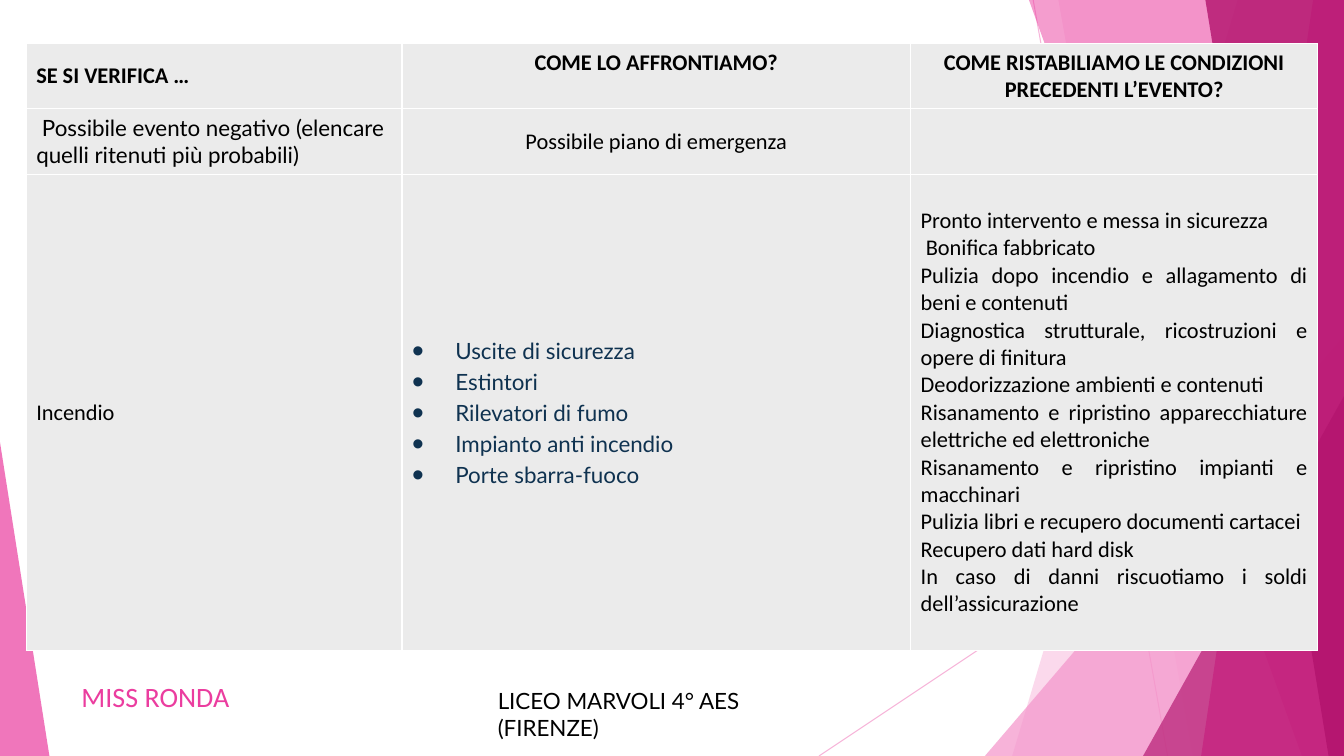
from dataclasses import dataclass

from lxml.etree import SubElement
from pptx import Presentation
from pptx.dml.color import RGBColor
from pptx.enum.shapes import MSO_CONNECTOR, MSO_SHAPE
from pptx.enum.text import MSO_ANCHOR, MSO_AUTO_SIZE, PP_ALIGN
from pptx.oxml.ns import qn
from pptx.util import Pt


@dataclass(frozen=True)
class Theme:
    light_pink: str = "F496CB"
    pink: str = "EB3D9F"
    magenta: str = "B2136D"
    cell: str = "EBEBEB"
    border: str = "FFFFFF"
    ink: str = "000000"
    navy: str = "0F3250"
    main_font: str = "Calibri"
    second_font: str = "Lato"
    text_size: int = 16
    title_size: int = 20


THEME = Theme()
WIDTH, HEIGHT = 960, 540
COLUMNS = (268.4, 363.4, 290.8)
ROWS = (46.4, 47.3, 339.7)
MEASURES = [
    "Uscite di sicurezza",
    "Estintori",
    "Rilevatori di fumo",
    "Impianto anti incendio",
    "Porte sbarra-fuoco",
]
RECOVERY = [
    "Pronto intervento e messa in sicurezza",
    " Bonifica fabbricato",
    "Pulizia dopo incendio e allagamento di beni e contenuti",
    "Diagnostica strutturale, ricostruzioni e opere di finitura",
    "Deodorizzazione ambienti e contenuti",
    "Risanamento e ripristino apparecchiature elettriche ed elettroniche",
    "Risanamento e ripristino impianti e macchinari",
    "Pulizia libri e recupero documenti cartacei",
    "Recupero dati hard disk",
    "In caso di danni riscuotiamo i soldi dell’assicurazione",
]


def apply_format(target, values):
    for name, value in values.items():
        setattr(target, name, value)


def set_alpha(fill_parent, percent):
    color = fill_parent.find(".//" + qn("a:srgbClr"))
    SubElement(color, qn("a:alpha"), val=str(percent * 1000))


def paint(shape, color, opacity):
    shape.shadow.inherit = False
    shape.fill.solid()
    shape.fill.fore_color.rgb = RGBColor.from_string(color)
    set_alpha(shape.element.spPr.find(qn("a:solidFill")), opacity)
    shape.line.fill.background()


def add_ray(page, start, end):
    ray = page.shapes.add_connector(
        MSO_CONNECTOR.STRAIGHT, *(Pt(value) for value in start + end))
    ray.line.width = Pt(0.75)
    ray.line.color.rgb = RGBColor.from_string(THEME.light_pink)
    properties = ray._element.spPr
    set_alpha(properties.find(qn("a:ln")), 70)
    SubElement(properties, qn("a:effectLst"))


def add_wedge(page, top_x, bottom_x, color, opacity):
    builder = page.shapes.build_freeform(top_x, 0, scale=Pt(1))
    builder.add_line_segments(
        [(WIDTH, 0), (WIDTH, HEIGHT), (bottom_x, HEIGHT)], close=True)
    paint(builder.convert_to_shape(), color, opacity)


def add_corner(page, left, right, top, apex, color, opacity):
    corner = page.shapes.add_shape(
        MSO_SHAPE.ISOSCELES_TRIANGLE,
        Pt(left), Pt(top), Pt(right - left), Pt(HEIGHT - top))
    corner.adjustments[0] = apex
    paint(corner, color, opacity)


def add_backdrop(page):
    add_ray(page, (738, 0), (834, HEIGHT))
    add_ray(page, (WIDTH, 290), (585, HEIGHT))
    add_wedge(page, 884, 723, THEME.light_pink, 36)
    add_wedge(page, 756, 852, THEME.light_pink, 20)
    add_corner(page, 703.5, WIDTH, 240, 1, THEME.light_pink, 72)
    add_wedge(page, 735, 929.5, THEME.pink, 50)
    add_wedge(page, 938, 858, THEME.pink, 70)
    add_wedge(page, 861, 949, THEME.magenta, 80)
    add_corner(page, 816.5, WIDTH, 283, 1, THEME.magenta, 66)
    add_corner(page, 0, 35.3, 316, 0, THEME.pink, 70)


def write(frame, lines, align=PP_ALIGN.LEFT, font=THEME.main_font,
          color=THEME.ink, size=THEME.text_size, bold=False, bullets=False):
    for index, line in enumerate(lines):
        para = frame.add_paragraph() if index else frame.paragraphs[0]
        para.alignment = align
        if bullets:
            add_bullet(para)
        span = para.add_run()
        span.text = line
        apply_format(span.font, {"name": font, "size": Pt(size), "bold": bold})
        span.font.color.rgb = RGBColor.from_string(color)


def add_bullet(para):
    para.space_before = Pt(3)
    properties = para._p.get_or_add_pPr()
    properties.set("marL", str(Pt(31)))
    properties.set("indent", str(-Pt(31)))
    SubElement(properties, qn("a:buSzPct"), val="150000")
    SubElement(properties, qn("a:buFont"), typeface="Arial")
    SubElement(properties, qn("a:buChar"), char="•")


def format_cell(cell):
    cell.vertical_anchor = MSO_ANCHOR.MIDDLE
    properties = cell._tc.get_or_add_tcPr()
    for side in ("lnL", "lnR", "lnT", "lnB"):
        line = SubElement(properties, qn("a:" + side), w=str(Pt(1)))
        fill = SubElement(line, qn("a:solidFill"))
        SubElement(fill, qn("a:srgbClr"), val=THEME.border)
    cell.fill.solid()
    cell.fill.fore_color.rgb = RGBColor.from_string(THEME.cell)


def add_plan(page):
    table = page.shapes.add_table(
        len(ROWS), len(COLUMNS), Pt(18.7), Pt(31.2),
        Pt(sum(COLUMNS)), Pt(sum(ROWS))).table
    apply_format(table, {"first_row": False, "horz_banding": False})
    for column, width in zip(table.columns, COLUMNS):
        column.width = Pt(width)
    for row, height in zip(table.rows, ROWS):
        row.height = Pt(height)
    for cell in table.iter_cells():
        format_cell(cell)
    table.cell(0, 1).vertical_anchor = MSO_ANCHOR.TOP

    center, justify = PP_ALIGN.CENTER, PP_ALIGN.JUSTIFY
    contents = {
        (0, 0): (["SE SI VERIFICA …"], {"bold": True}),
        (0, 1): (["COME LO AFFRONTIAMO?"], {"bold": True, "align": center}),
        (0, 2): (["COME RISTABILIAMO LE CONDIZIONI PRECEDENTI L’EVENTO?"],
                 {"bold": True, "align": center}),
        (1, 0): ([" Possibile evento negativo (elencare quelli ritenuti più probabili)"],
                 {"font": THEME.second_font}),
        (1, 1): (["Possibile piano di emergenza"], {"align": center}),
        (2, 0): (["Incendio"], {}),
        (2, 1): (MEASURES, {"align": justify, "font": THEME.second_font,
                            "color": THEME.navy, "bullets": True}),
        (2, 2): (RECOVERY, {"align": justify}),
    }
    for (row, column), (lines, style) in contents.items():
        write(table.cell(row, column).text_frame, lines, **style)


def place_text(box, left, top, width, height, text, **style):
    apply_format(box, {"left": Pt(left), "top": Pt(top),
                       "width": Pt(width), "height": Pt(height)})
    apply_format(box.text_frame, {
        "word_wrap": True, "auto_size": MSO_AUTO_SIZE.NONE,
        "vertical_anchor": MSO_ANCHOR.TOP})
    write(box.text_frame, [text], **style)


def main():
    deck = Presentation()
    apply_format(deck, {"slide_width": Pt(WIDTH), "slide_height": Pt(HEIGHT)})
    page = deck.slides.add_slide(deck.slide_layouts[5])
    add_backdrop(page)
    add_plan(page)
    place_text(page.shapes.title, 51, 482, 172, 37.5, "MISS RONDA",
               color=THEME.pink, size=THEME.title_size)
    school = page.shapes.add_textbox(0, 0, 0, 0)
    place_text(school, 348.5, 487.5, 247, 26.6, "LICEO MARVOLI 4° AES (FIRENZE)",
               font=THEME.second_font)
    deck.save("out.pptx")


if __name__ == "__main__":
    main()
